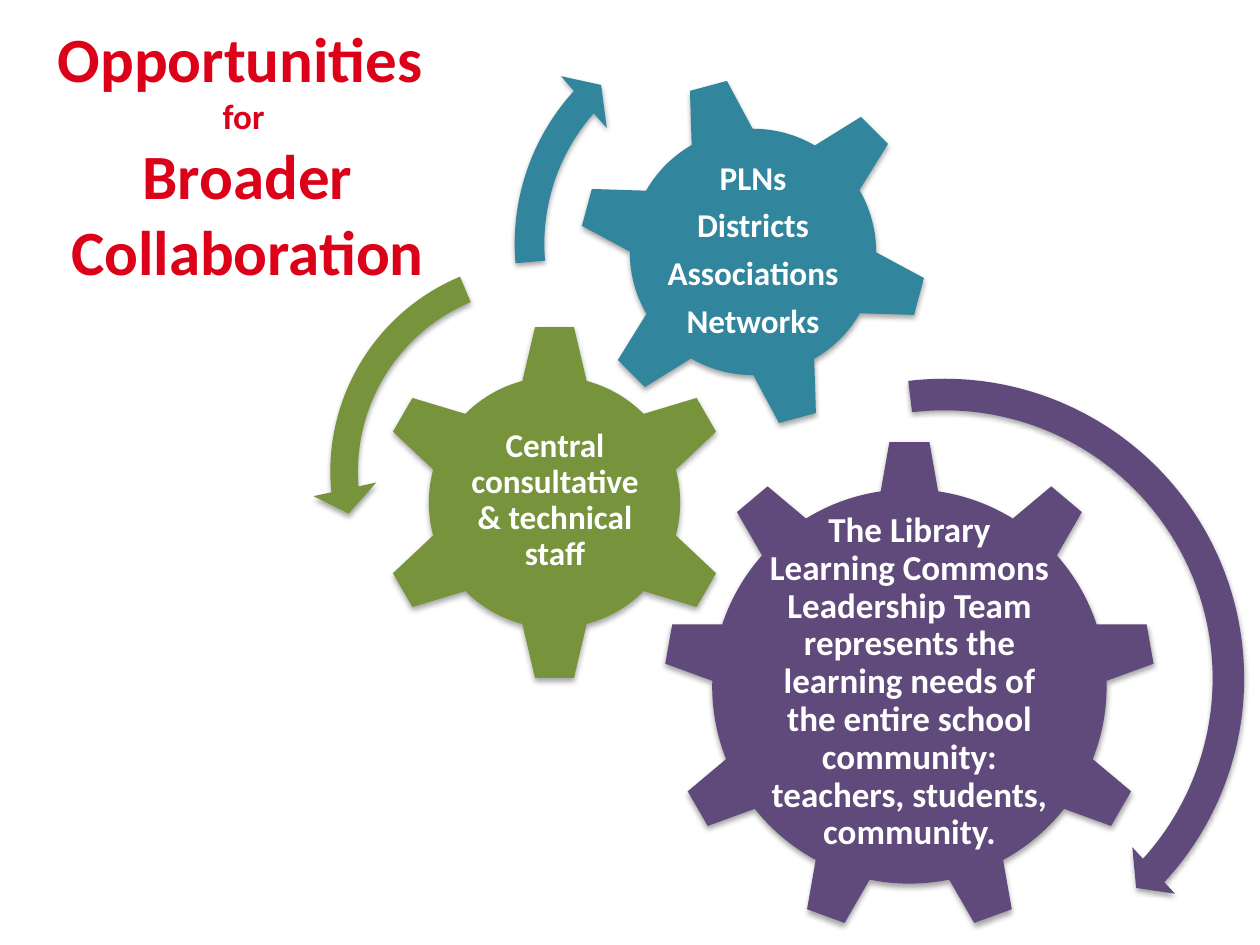
from lxml import etree
from pptx import Presentation
from pptx.dml.color import RGBColor
from pptx.enum.shapes import MSO_SHAPE
from pptx.enum.text import MSO_ANCHOR, PP_ALIGN
from pptx.oxml.ns import qn
from pptx.util import Emu, Pt

GEAR_6, GEAR_9 = MSO_SHAPE.GEAR_6, MSO_SHAPE.GEAR_9
ARROW, LEFT_ARROW = MSO_SHAPE.CIRCULAR_ARROW, MSO_SHAPE.LEFT_CIRCULAR_ARROW
CENTER, MIDDLE = PP_ALIGN.CENTER, MSO_ANCHOR.MIDDLE
FONT = "Calibri"
COLORS = {
    "purple": "604A7B",
    "green": "77933C",
    "teal": "31859C",
    "title": "DC0019",
    "label": "FFFFFF",
    "shadow": "000000",
}


def px(count):
    """Turn pixels into EMU."""
    return Emu(round(count * 914400 / 126))


def add_shadow(shape):
    """Give a shape a soft shadow that falls straight down."""
    shape.shadow.inherit = False
    effects = shape._element.spPr.find(qn("a:effectLst"))
    shadow = etree.SubElement(effects, qn("a:outerShdw"), blurRad="40000",
                              dist="23000", dir="5400000", rotWithShape="0")
    color = etree.SubElement(shadow, qn("a:srgbClr"), val=COLORS["shadow"])
    etree.SubElement(color, qn("a:alpha"), val="35000")


def add_solid(shapes, kind, box, color):
    """Add a filled square shape with a shadow and no outline."""
    left, top, side = box
    shape = shapes.add_shape(kind, px(left), px(top), px(side), px(side))
    shape.fill.solid()
    shape.fill.fore_color.rgb = RGBColor.from_string(COLORS[color])
    shape.line.fill.background()
    add_shadow(shape)
    return shape


def add_text(shapes, box, lines, color):
    """Add a text box of centred bold lines, each a pair of text and size."""
    text_box = shapes.add_textbox(*map(px, box))
    frame = text_box.text_frame
    frame.word_wrap = True
    for index, (text, size) in enumerate(lines):
        para = frame.paragraphs[0] if index == 0 else frame.add_paragraph()
        para.text = text
        para.alignment = CENTER
        para.font.name = FONT
        para.font.size = Pt(size)
        para.font.bold = True
        para.font.color.rgb = RGBColor.from_string(COLORS[color])
    return frame


def add_gear(shapes, kind, box, color, label_box, lines, size, rotation=0):
    """Add a gear and its label, placed relative to the gear's box."""
    add_solid(shapes, kind, box, color).rotation = rotation
    left, top, width, height = label_box
    frame = add_text(shapes, (box[0] + left, box[1] + top, width, height),
                     [(line, size) for line in lines], "label")
    frame.vertical_anchor = MIDDLE
    frame.margin_left = frame.margin_right = px(4)
    frame.margin_top = frame.margin_bottom = px(4)
    for para in frame.paragraphs:
        para.line_spacing = 0.9
        para.space_after = Pt(0.35 * size)


def add_turn_arrow(shapes, kind, box, color, adjustments):
    """Add a curved arrow that shows which way a gear turns."""
    arrow = add_solid(shapes, kind, box, color)
    for index, value in enumerate(adjustments):
        arrow.adjustments[index] = value


def add_gear_diagram(page):
    """Add the three meshed gears and their arrows as one group."""
    shapes = page.shapes.add_group_shape().shapes
    add_gear(shapes, GEAR_9, (663, 440, 493), "purple", (99, 116, 295, 253),
             ["The Library Learning Commons Leadership Team represents the "
              "learning needs of the entire school community: teachers, "
              "students, community."], 20)
    add_gear(shapes, GEAR_6, (375, 323, 359), "green", (91, 90, 178, 176),
             ["Central consultative & technical staff"], 19)
    add_gear(shapes, GEAR_6, (577, 76, 352), "teal", (77, 76, 198, 198),
             ["PLNs", "Districts", "Associations", "Networks"], 19, 345)
    add_turn_arrow(shapes, ARROW, (629, 363, 631), "purple",
                   (0.05, 2.99, 25.53, 157.84, 0.05))
    add_turn_arrow(shapes, LEFT_ARROW, (312, 242, 459), "green",
                   (0.06, 4.3, 104.89, 148.38, 0.07))
    add_turn_arrow(shapes, ARROW, (495, -3, 494), "teal",
                   (0.06, 3.94, 133.14, 105.08, 0.07))


def add_title(page, box):
    """Add the red heading."""
    add_text(page.shapes, box,
             [("Opportunities ", 36), ("for ", 20), ("Broader Collaboration", 36)],
             "title")


def main():
    """Build the deck and save it."""
    deck = Presentation()
    deck.slide_width, deck.slide_height = px(1260), px(945)
    page = deck.slides.add_slide(deck.slide_layouts[6])
    add_gear_diagram(page)
    add_title(page, (19, 13, 457, 285))
    deck.save("out.pptx")


if __name__ == "__main__":
    main()
